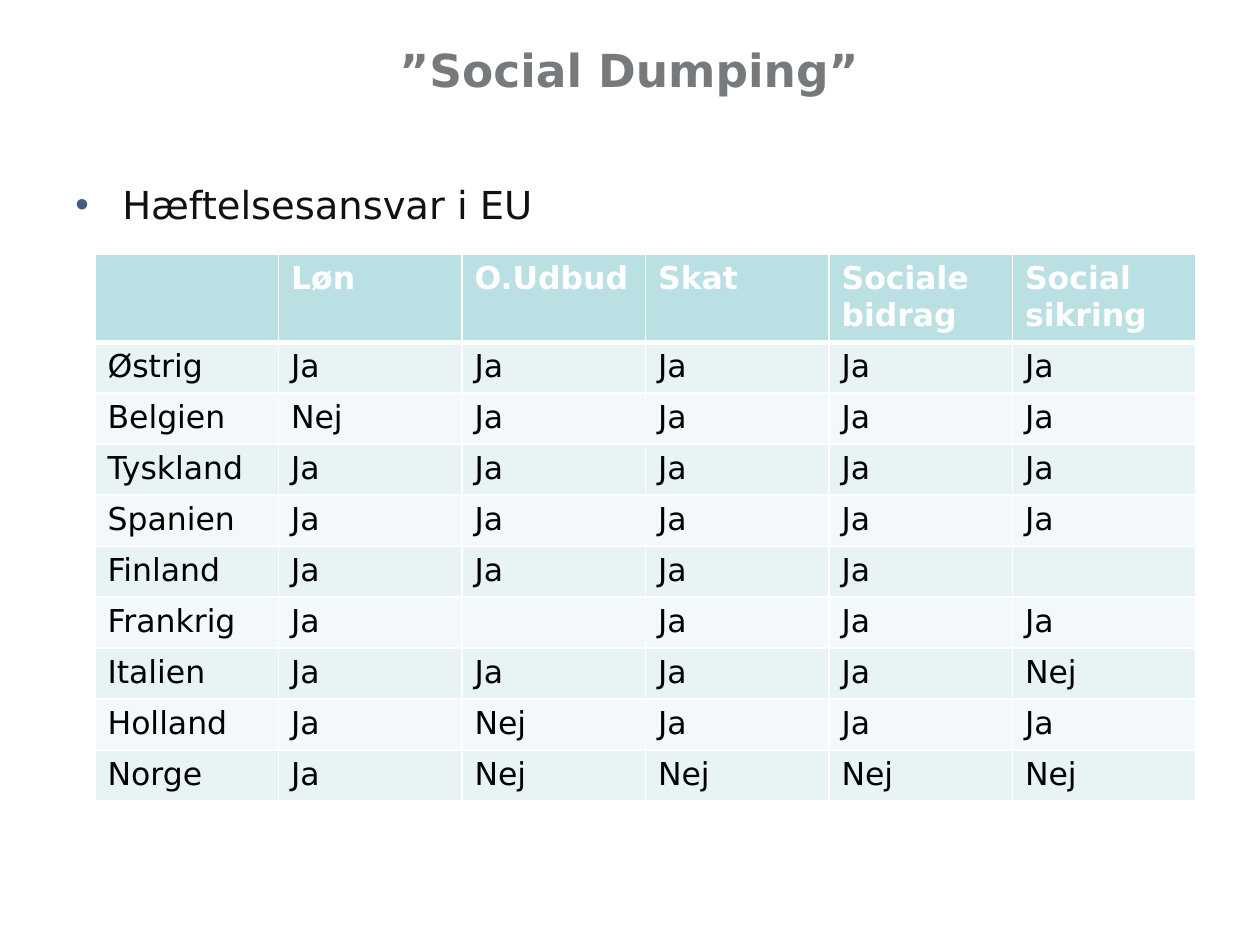
from lxml.etree import SubElement
from pptx import Presentation
from pptx.dml.color import RGBColor
from pptx.enum.text import MSO_ANCHOR as Anchor, PP_ALIGN as Align
from pptx.oxml.ns import qn
from pptx.util import Emu, Pt

PX = 914400 // 126
FONT = "DejaVu Sans"
WHITE = RGBColor(0xFF, 0xFF, 0xFF)
BLACK = RGBColor(0x00, 0x00, 0x00)
TITLE_GRAY = RGBColor(0x77, 0x7A, 0x7C)
BODY_INK = RGBColor(0x11, 0x11, 0x11)
BULLET_BLUE = RGBColor(0x40, 0x5C, 0x7F)
HEADER_FILL = RGBColor(0xBB, 0xE0, 0xE3)
BAND_FILLS = RGBColor(0xE7, 0xF3, 0xF4), RGBColor(0xF3, 0xF9, 0xFA)

TABLE_WIDTH, HEADER_HEIGHT, ROW_HEIGHT = 1101, 86, 51
LIABILITY = [
    ["", "Løn", "O.Udbud", "Skat", "Sociale bidrag", "Social sikring"],
    ["Østrig", "Ja", "Ja", "Ja", "Ja", "Ja"],
    ["Belgien", "Nej", "Ja", "Ja", "Ja", "Ja"],
    ["Tyskland", "Ja", "Ja", "Ja", "Ja", "Ja"],
    ["Spanien", "Ja", "Ja", "Ja", "Ja", "Ja"],
    ["Finland", "Ja", "Ja", "Ja", "Ja", ""],
    ["Frankrig", "Ja", "", "Ja", "Ja", "Ja"],
    ["Italien", "Ja", "Ja", "Ja", "Ja", "Nej"],
    ["Holland", "Ja", "Nej", "Ja", "Ja", "Ja"],
    ["Norge", "Ja", "Nej", "Nej", "Nej", "Nej"],
]


def px(length):
    return Emu(round(length * PX))


def write_text(frame, text, size, color, bold=False, align=Align.LEFT):
    paragraph = frame.paragraphs[0]
    paragraph.text = text
    paragraph.alignment = align
    font = paragraph.font
    font.name, font.size, font.bold = FONT, Pt(size), bold
    font.color.rgb = color


def add_bullet(paragraph, indent, color):
    properties = paragraph._p.get_or_add_pPr()
    properties.set("marL", str(px(indent)))
    properties.set("indent", str(-px(indent)))
    bullet_color = SubElement(properties, qn("a:buClr"))
    SubElement(bullet_color, qn("a:srgbClr"), val=str(color))
    SubElement(properties, qn("a:buFont"), typeface="Arial")
    SubElement(properties, qn("a:buChar"), char="•")


def set_borders(cell, color, top=1, bottom=1):
    """Draw the four cell borders; call this before the cell is filled."""
    properties = cell._tc.get_or_add_tcPr()
    for side, width in {"L": 1, "R": 1, "T": top, "B": bottom}.items():
        line = SubElement(properties, qn(f"a:ln{side}"), w=str(Pt(width)))
        fill = SubElement(line, qn("a:solidFill"))
        SubElement(fill, qn("a:srgbClr"), val=str(color))


def set_title(slide, text):
    title = slide.shapes.title
    title.left, title.top, title.width, title.height = map(px, (84, 26, 1091, 87))
    frame = title.text_frame
    frame.margin_left = frame.margin_right = 0
    frame.vertical_anchor = Anchor.MIDDLE
    write_text(frame, text, size=26, color=TITLE_GRAY, bold=True, align=Align.CENTER)


def add_bullet_text(slide, text):
    frame = slide.shapes.add_textbox(*map(px, (63, 175, 1134, 624))).text_frame
    frame.word_wrap = True
    add_bullet(frame.paragraphs[0], indent=47, color=BULLET_BLUE)
    write_text(frame, text, size=22, color=BODY_INK)


def add_liability_table(slide, rows):
    height = HEADER_HEIGHT + ROW_HEIGHT * (len(rows) - 1)
    table = slide.shapes.add_table(
        len(rows), len(rows[0]), px(95), px(254), px(TABLE_WIDTH), px(height)
    ).table
    for column in table.columns:
        column.width = px(TABLE_WIDTH / len(rows[0]))
    for row_index, texts in enumerate(rows):
        is_header = row_index == 0
        table.rows[row_index].height = px(HEADER_HEIGHT if is_header else ROW_HEIGHT)
        for cell, text in zip(table.rows[row_index].cells, texts):
            set_borders(cell, WHITE, top=3 if row_index == 1 else 1,
                        bottom=3 if is_header else 1)
            cell.fill.solid()
            cell.fill.fore_color.rgb = (
                HEADER_FILL if is_header else BAND_FILLS[(row_index - 1) % 2]
            )
            write_text(cell.text_frame, text, size=18,
                       color=WHITE if is_header else BLACK, bold=is_header)


def main():
    presentation = Presentation()
    presentation.slide_width, presentation.slide_height = px(1260), px(945)
    slide = presentation.slides.add_slide(presentation.slide_layouts[5])
    set_title(slide, "”Social Dumping”")
    add_bullet_text(slide, "Hæftelsesansvar i EU")
    add_liability_table(slide, LIABILITY)
    presentation.save("out.pptx")


if __name__ == "__main__":
    main()
